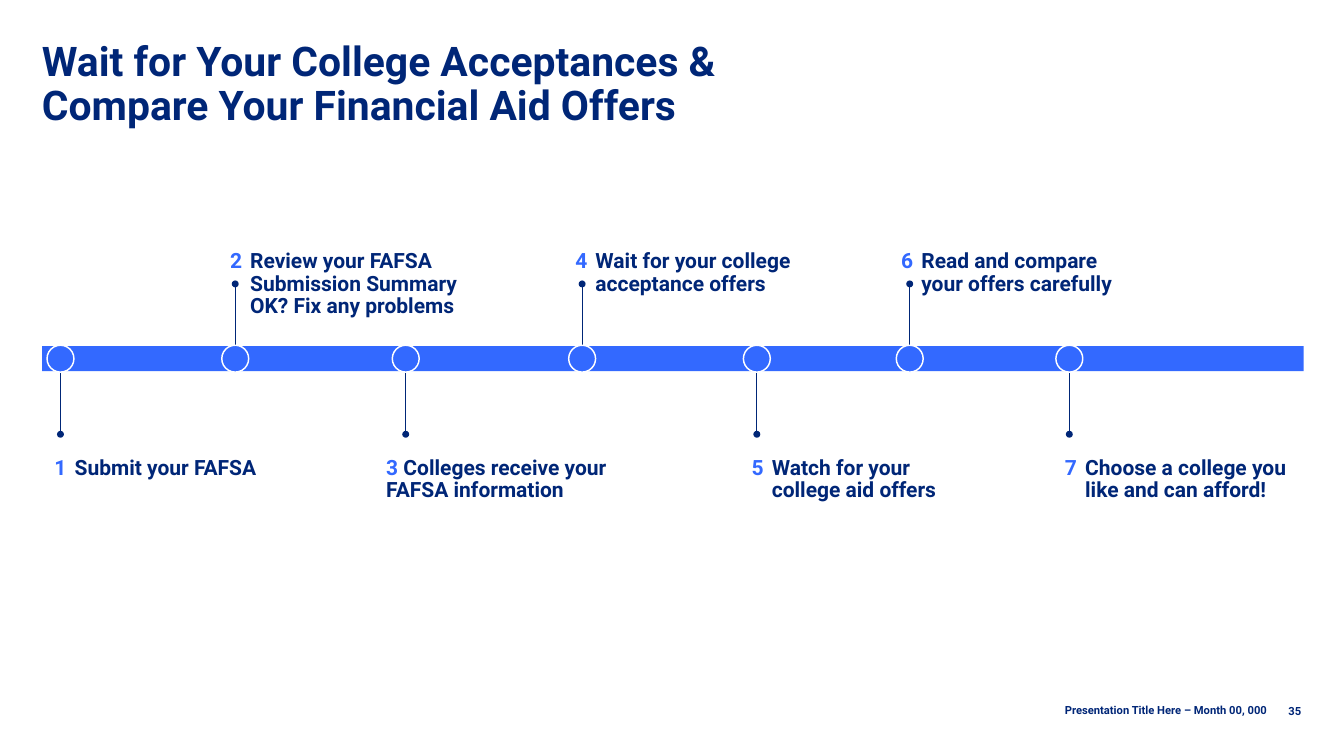
from lxml import etree
from pptx import Presentation
from pptx.dml.color import RGBColor
from pptx.enum import shapes, text
from pptx.oxml import ns
from pptx.util import Inches, Pt

NAVY = RGBColor(0x00, 0x26, 0x77)
BLUE = RGBColor(0x33, 0x69, 0xFF)
WHITE = RGBColor(0xFF, 0xFF, 0xFF)
LEFT, RIGHT = text.PP_ALIGN.LEFT, text.PP_ALIGN.RIGHT

deck = Presentation()
deck.slide_width, deck.slide_height = Inches(16), Inches(9)
page = deck.slides.add_slide(deck.slide_layouts[6])


def add_text(left, top, width, height, lines, size, color=NAVY, align=LEFT, spacing=0.9):
    """Add a bold text box with one paragraph per line and return its frame."""
    box = page.shapes.add_textbox(Inches(left), Inches(top), Inches(width), Inches(height))
    frame = box.text_frame
    frame.word_wrap = True
    frame.text = "\n".join(lines)
    for para in frame.paragraphs:
        para.alignment = align
        para.line_spacing = spacing
        para.font.name = "Roboto"
        para.font.size = Pt(size)
        para.font.bold = True
        para.font.color.rgb = color
    return frame


def add_solid(kind, left, top, width, height):
    solid = page.shapes.add_shape(kind, Inches(left), Inches(top), Inches(width), Inches(height))
    solid.shadow.inherit = False
    solid.fill.solid()
    solid.fill.fore_color.rgb = BLUE
    return solid


bar = add_solid(shapes.MSO_SHAPE.RECTANGLE, 0.5, 4.12, 15.02, 0.3)
bar.line.fill.background()

add_text(0.4, 0.44, 12.42, 1.1,
         ["Wait for Your College Acceptances &\vCompare Your Financial Aid Offers"], 35)
add_text(15.19, 8.33, 0.4, 0.19, ["35"], 9.6, align=RIGHT, spacing=1)
footer = add_text(9.78, 8.33, 5.4, 0.24, ["Presentation Title Here – Month 00, 000"], 9.6,
                  align=RIGHT, spacing=1)
footer.vertical_anchor = text.MSO_ANCHOR.MIDDLE

# Marker centre, label left, label width, label lines
steps = [
    (0.72, 0.79, 2.69, ["Submit your FAFSA"]),
    (2.8, 2.88, 2.97, ["Review your FAFSA", "Submission Summary", "OK? Fix any problems"]),
    (4.83, 4.5, 2.97, ["Colleges receive your FAFSA information"]),
    (6.93, 6.99, 2.69, ["Wait for your college acceptance offers"]),
    (9.01, 9.09, 2.69, ["Watch for your college aid offers"]),
    (10.83, 10.87, 2.69, ["Read and compare your offers carefully"]),
    (12.73, 12.82, 2.69, ["Choose a college you like and can afford!"]),
]
INLINE_NUMBER = 3
DIAMETER = 0.32

for number, (center, label_left, label_width, lines) in enumerate(steps, 1):
    above = number % 2 == 0
    label_top = 2.93 if above else 5.39
    label_height = 0.24 + 0.26 * max(2, len(lines))
    label = add_text(label_left, label_top, label_width, label_height, lines, 18)
    if number == INLINE_NUMBER:
        para = label.paragraphs[0]
        para.clear()
        for words, color in ((f"{number} ", BLUE), (lines[0], NAVY)):
            span = para.add_run()
            span.text = words
            span.font.color.rgb = color
    else:
        add_text(label_left - 0.41, label_top, 0.51, 0.36, [str(number)], 18, BLUE, RIGHT)

    start, end = (4.26, 3.38) if above else (4.43, 5.17)
    stem = page.shapes.add_connector(shapes.MSO_CONNECTOR.STRAIGHT, Inches(center), Inches(start),
                                     Inches(center), Inches(end))
    stem.line.color.rgb = NAVY
    stem.line.width = Pt(0.75)
    etree.SubElement(stem.line._get_or_add_ln(), ns.qn("a:tailEnd"), type="oval")
    etree.SubElement(stem._element.spPr, ns.qn("a:effectLst"))

    marker = add_solid(shapes.MSO_SHAPE.OVAL, center - DIAMETER / 2, 4.11, DIAMETER, DIAMETER)
    marker.line.color.rgb = WHITE
    marker.line.width = Pt(1.25)

deck.save("out.pptx")
